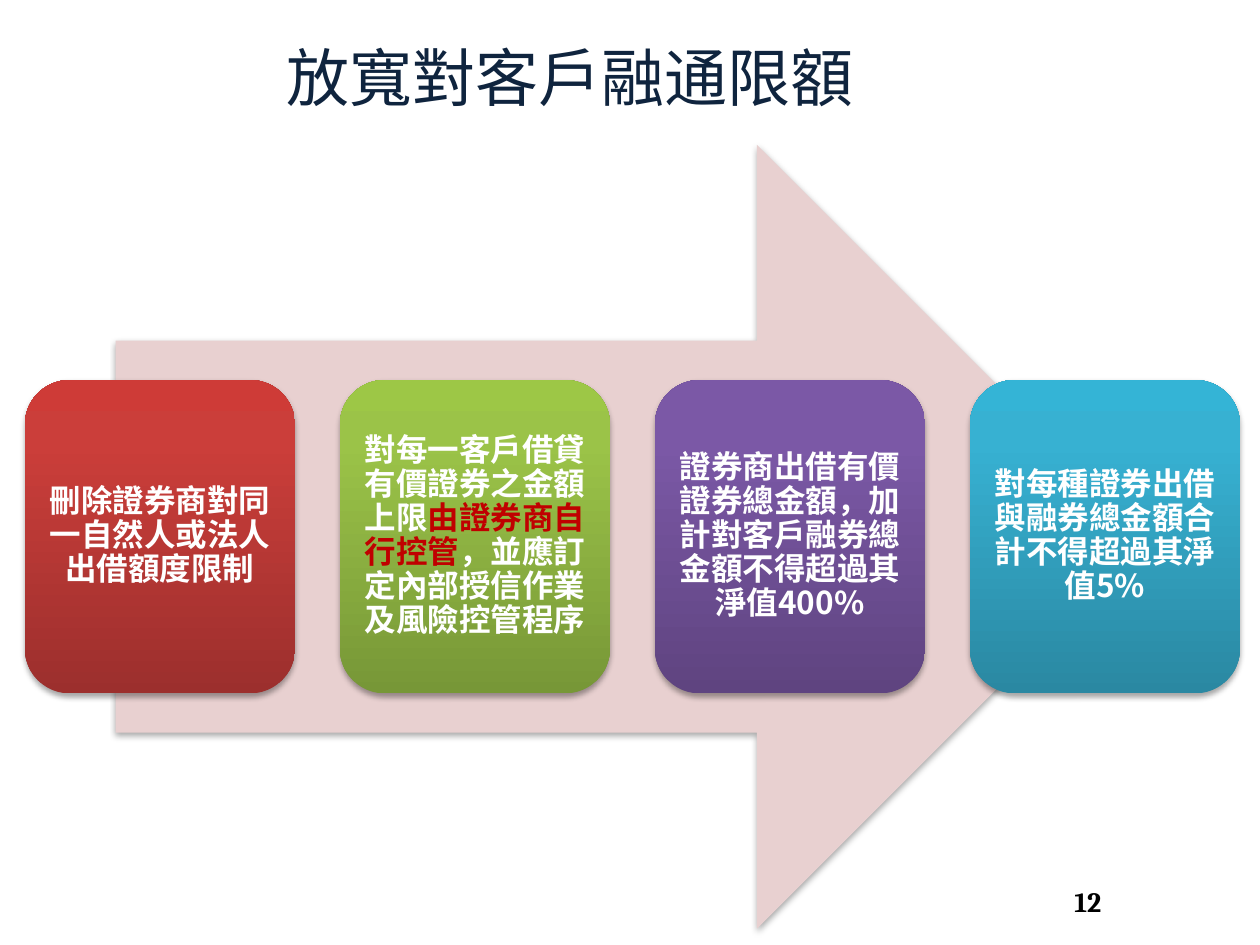
from copy import deepcopy

from pptx import Presentation
from pptx.dml.color import RGBColor
from pptx.enum import shapes, text
from pptx.oxml import parse_xml
from pptx.oxml.ns import nsdecls, qn
from pptx.util import Cm, Pt

NAVY = RGBColor(0x0F, 0x24, 0x3E)
BLACK = RGBColor(0, 0, 0)
WHITE = RGBColor(0xFF, 0xFF, 0xFF)
EMPHASIS = RGBColor(0xC0, 0, 0)
PALE_RED = RGBColor(0xE8, 0xD0, 0xD0)
REDS = [RGBColor.from_string(c) for c in ("9C2F2D", "CB3E3A", "CE3B37")]
GREENS = [RGBColor.from_string(c) for c in ("779737", "9BC348", "9DC746")]
PURPLES = [RGBColor.from_string(c) for c in ("5F4480", "7B58A6", "7C57A8")]
BLUES = [RGBColor.from_string(c) for c in ("2A88A2", "37B1D2", "34B4D6")]

# Each measure: gradient from bottom to top, then (wording, emphasised) runs
MEASURES = [
    (REDS, [("刪除證券商對同一自然人或法人出借額度限制", False)]),
    (GREENS, [("對每一客戶借貸有價證券之金額上限", False),
              ("由證券商自行控管", True),
              ("，並應訂定內部授信作業及風險控管程序", False)]),
    (PURPLES, [("證券商出借有價證券總金額，加計對客戶融券總金額不得超過其淨值400%", False)]),
    (BLUES, [("對每種證券出借與融券總金額合計不得超過其淨值5%", False)]),
]


def add_soft_shadow(shape):
    shape.shadow.inherit = False
    shape._element.spPr.find(qn("a:effectLst")).append(parse_xml(
        f'<a:outerShdw {nsdecls("a")} blurRad="40000" dist="23000" dir="5400000" '
        'rotWithShape="0"><a:srgbClr val="000000"><a:alpha val="35000"/></a:srgbClr>'
        '</a:outerShdw>'))


def format_paragraph(paragraph, font_name, size, color, bold=False):
    paragraph.alignment = text.PP_ALIGN.CENTER
    font = paragraph.font
    font.name, font.size, font.bold = font_name, Pt(size), bold
    font.color.rgb = color


prs = Presentation()
prs.slide_width, prs.slide_height = Cm(25.4), Cm(19.05)
slide = prs.slides.add_slide(prs.slide_layouts[5])

# Title
title = slide.shapes.title
title.left, title.top, title.width, title.height = Cm(3.5), Cm(0.53), Cm(16), Cm(2)
title.text_frame.text = "放寬對客戶融通限額"
title.text_frame.vertical_anchor = text.MSO_ANCHOR.MIDDLE
format_paragraph(title.text_frame.paragraphs[0], "Cambria", 36, NAVY)

# Page number
page = slide.shapes.add_textbox(Cm(18.97), Cm(17.65), Cm(5.92), Cm(1.02)).text_frame
page.word_wrap = True
page.vertical_anchor = text.MSO_ANCHOR.MIDDLE
page.text = "12"
format_paragraph(page.paragraphs[0], "Cambria", 16, BLACK, bold=True)

# Background arrow
arrow = slide.shapes.add_shape(
    shapes.MSO_SHAPE.RIGHT_ARROW, Cm(2.33), Cm(2.92), Cm(20.83), Cm(15.8))
arrow.fill.solid()
arrow.fill.fore_color.rgb = PALE_RED
arrow.line.fill.background()
add_soft_shadow(arrow)

# Row of measures
for column, (gradient, wording) in enumerate(MEASURES):
    measure = slide.shapes.add_shape(
        shapes.MSO_SHAPE.ROUNDED_RECTANGLE,
        Cm(0.5 + 6.35 * column), Cm(7.66), Cm(5.45), Cm(6.32))
    measure.line.fill.background()
    add_soft_shadow(measure)

    measure.fill.gradient()
    measure.fill.gradient_angle = 90
    stops = measure._element.spPr.find(qn("a:gradFill")).find(qn("a:gsLst"))
    stops.insert(1, deepcopy(stops[0]))
    for stop, position, color in zip(measure.fill.gradient_stops, (0, 0.8, 1), gradient):
        stop.position = position
        stop.color.rgb = color

    frame = measure.text_frame
    frame.word_wrap = True
    frame.vertical_anchor = text.MSO_ANCHOR.MIDDLE
    frame.margin_left = frame.margin_right = Cm(0.18)
    frame.margin_top = frame.margin_bottom = Cm(0.18)
    paragraph = frame.paragraphs[0]
    paragraph.line_spacing = 0.9
    format_paragraph(paragraph, "Noto Sans CJK SC", 18, WHITE, bold=True)
    for words, emphasised in wording:
        run = paragraph.add_run()
        run.text = words
        if emphasised:
            run.font.color.rgb = EMPHASIS

prs.save("out.pptx")
